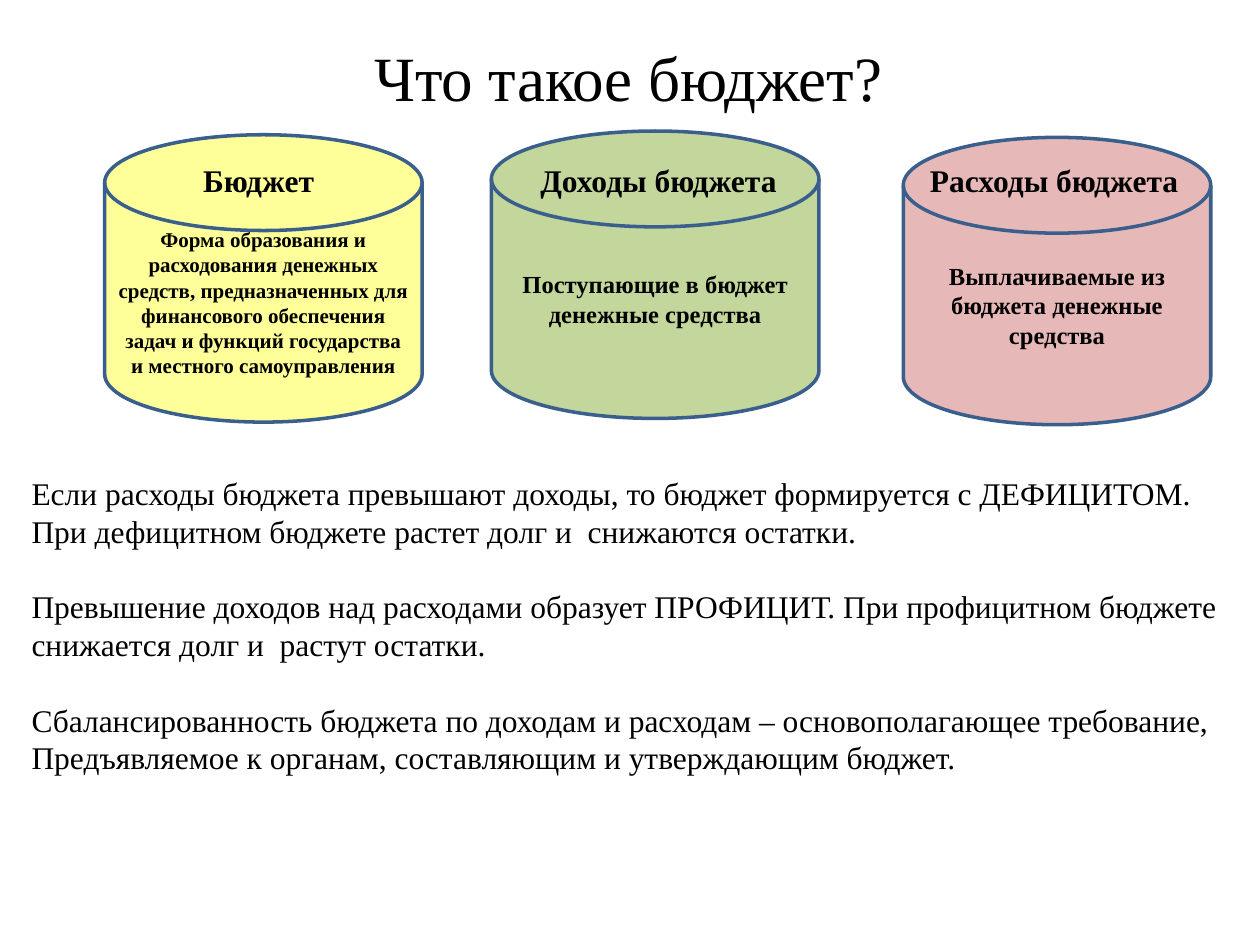
from dataclasses import dataclass

from pptx import Presentation
from pptx.dml.color import RGBColor
from pptx.enum.shapes import MSO_SHAPE
from pptx.enum.text import MSO_ANCHOR, MSO_AUTO_SIZE, PP_ALIGN
from pptx.oxml.xmlchemy import OxmlElement
from pptx.util import Pt

FONT = "Times New Roman"
BLACK = RGBColor(0x00, 0x00, 0x00)
OUTLINE = RGBColor(0x3A, 0x5F, 0x8C)
YELLOW = RGBColor(0xFF, 0xFF, 0x99)
GREEN = RGBColor(0xC3, 0xD6, 0x9B)
PINK = RGBColor(0xE6, 0xB9, 0xB8)

DRUM_HEIGHT = 164.2
CAPTION_TOP, CAPTION_WIDTH, CAPTION_HEIGHT = 88.6, 166, 28.8
GROUP_GAP = 21.6


@dataclass
class Drum:
    caption: str
    caption_center: float
    definition: str
    size: float
    left: float
    top: float
    width: float
    color: RGBColor


DRUMS = [
    Drum("Бюджет", 147.8,
         "Форма образования и расходования денежных средств, предназначенных для "
         "финансового обеспечения задач и функций государства и местного самоуправления",
         12, 59.8, 77, 181.4, YELLOW),
    Drum("Доходы бюджета", 376.3, "Поступающие в бюджет денежные средства",
         14, 280.8, 74.9, 187.2, GREEN),
    Drum("Расходы бюджета", 602.4, "Выплачиваемые из бюджета денежные средства",
         14, 516.2, 78.5, 175.7, PINK),
]

CONCLUSIONS = [
    ("Если расходы бюджета превышают доходы, то бюджет формируется с ДЕФИЦИТОМ.",
     "При дефицитном бюджете растет долг и  снижаются остатки."),
    ("Превышение доходов над расходами образует ПРОФИЦИТ. При профицитном бюджете",
     "снижается долг и  растут остатки."),
    ("Сбалансированность бюджета по доходам и расходам – основополагающее требование,",
     "Предъявляемое к органам, составляющим и утверждающим бюджет."),
]


def place(shape, left: float, top: float, width: float, height: float) -> None:
    shape.left, shape.top = Pt(left), Pt(top)
    shape.width, shape.height = Pt(width), Pt(height)


def style(paragraph, size: float, align: PP_ALIGN, bold: bool = False) -> None:
    paragraph.alignment = align
    font = paragraph.font
    font.name, font.size, font.bold = FONT, Pt(size), bold
    font.color.rgb = BLACK


def remove_bullet(paragraph) -> None:
    properties = paragraph._p.get_or_add_pPr()
    properties.set("marL", "0")
    properties.set("indent", "0")
    properties.insert_element_before(OxmlElement("a:buNone"), "a:tabLst", "a:defRPr", "a:extLst")


def draw_drum(slide, drum: Drum) -> None:
    cylinder = slide.shapes.add_shape(
        MSO_SHAPE.FLOWCHART_MAGNETIC_DISK,
        Pt(drum.left), Pt(drum.top), Pt(drum.width), Pt(DRUM_HEIGHT))
    cylinder.shadow.inherit = False
    cylinder.fill.solid()
    cylinder.fill.fore_color.rgb = drum.color
    cylinder.line.color.rgb = OUTLINE
    cylinder.line.width = Pt(2)
    cylinder.text_frame.text = drum.definition
    cylinder.text_frame.vertical_anchor = MSO_ANCHOR.MIDDLE
    style(cylinder.text_frame.paragraphs[0], drum.size, PP_ALIGN.CENTER, bold=True)

    # Caption on the lid
    caption = slide.shapes.add_textbox(
        Pt(drum.caption_center - CAPTION_WIDTH / 2), Pt(CAPTION_TOP),
        Pt(CAPTION_WIDTH), Pt(CAPTION_HEIGHT))
    caption.text_frame.word_wrap = True
    caption.text_frame.text = drum.caption
    style(caption.text_frame.paragraphs[0], 18, PP_ALIGN.CENTER, bold=True)


def write_conclusions(body) -> None:
    place(body, 10.8, 267.1, 702.7, 181.4)
    frame = body.text_frame
    frame.auto_size = MSO_AUTO_SIZE.NONE
    frame.text = "\n".join(line for group in CONCLUSIONS for line in group)
    group_starts = range(2, len(frame.paragraphs), 2)
    for index, paragraph in enumerate(frame.paragraphs):
        style(paragraph, 18, PP_ALIGN.LEFT)
        paragraph.space_before = Pt(GROUP_GAP if index in group_starts else 0)
        remove_bullet(paragraph)


def main() -> None:
    deck = Presentation()
    deck.slide_width, deck.slide_height = Pt(720), Pt(540)
    slide = deck.slides.add_slide(deck.slide_layouts[1])

    # Title
    title = slide.shapes.title
    place(title, 206.6, 18, 308.2, 51.1)
    title.text_frame.text = "Что такое бюджет?"
    title.text_frame.auto_size = MSO_AUTO_SIZE.NONE
    title.text_frame.word_wrap = False
    style(title.text_frame.paragraphs[0], 36, PP_ALIGN.LEFT)

    # Definitions and conclusions
    for drum in DRUMS:
        draw_drum(slide, drum)
    write_conclusions(slide.placeholders[1])

    deck.save("out.pptx")


if __name__ == "__main__":
    main()
